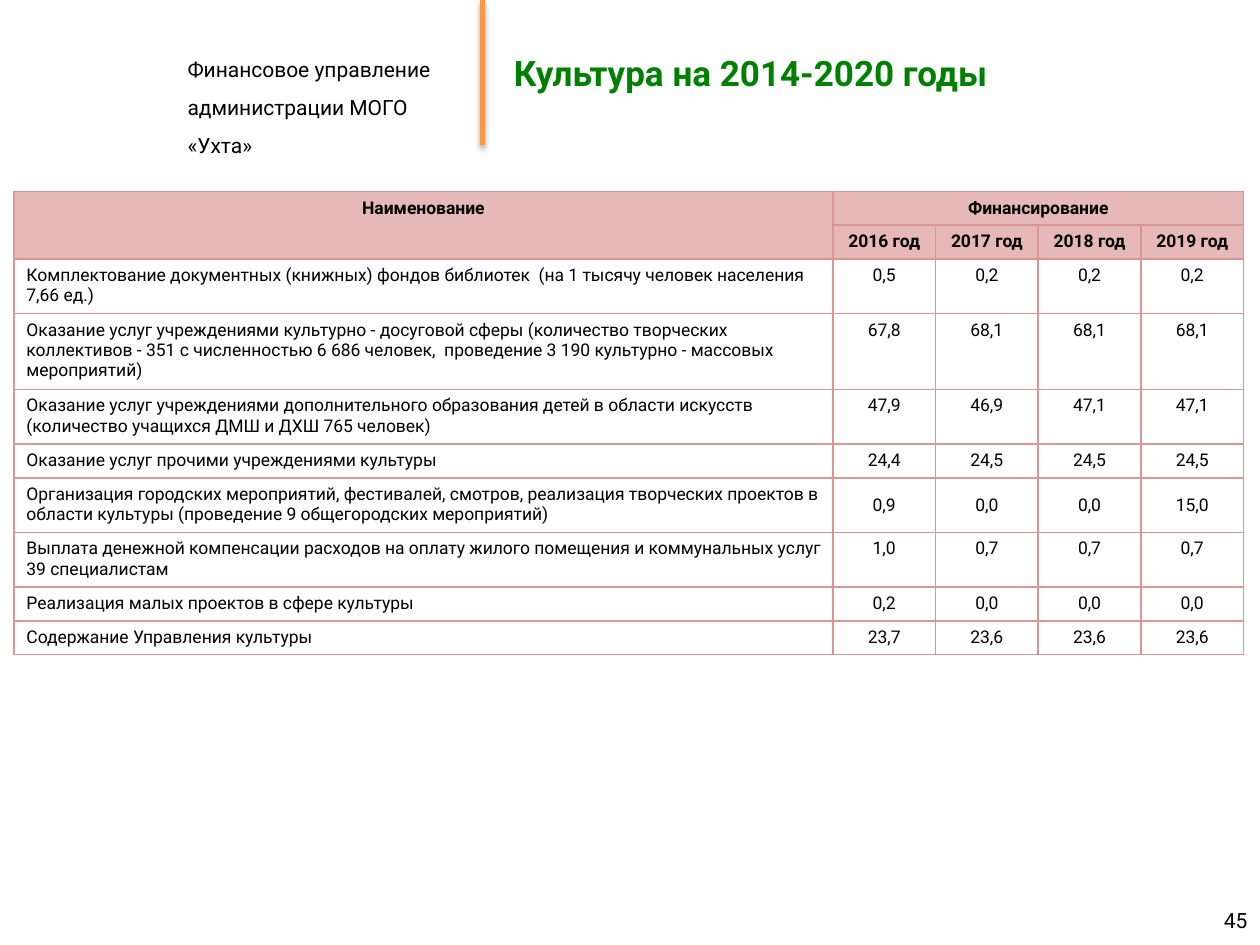
from lxml.etree import SubElement
from pptx import Presentation
from pptx.dml.color import RGBColor
from pptx.enum.shapes import MSO_CONNECTOR
from pptx.enum.text import MSO_ANCHOR, PP_ALIGN
from pptx.oxml import parse_xml
from pptx.oxml.ns import nsdecls, qn
from pptx.util import Inches, Pt

COLORS = {"text": "000000", "title": "008000", "accent": "F79646",
          "header": "E6B9B8", "border": "D99694", "body": "FFFFFF"}
YEARS = ["2016 год", "2017 год", "2018 год", "2019 год"]

# name, number of text lines, anchor of the figures, figures by year
TOP, MIDDLE = MSO_ANCHOR.TOP, MSO_ANCHOR.MIDDLE
EXPENSES = [
    ("Комплектование документных (книжных) фондов библиотек  (на 1 тысячу человек населения 7,66 ед.)",
     2, TOP, ["0,5", "0,2", "0,2", "0,2"]),
    ("Оказание услуг учреждениями культурно - досуговой сферы (количество творческих коллективов - 351 "
     "с численностью 6 686 человек,  проведение 3 190 культурно - массовых мероприятий)",
     3, TOP, ["67,8", "68,1", "68,1", "68,1"]),
    ("Оказание услуг учреждениями дополнительного образования детей в области искусств "
     "(количество учащихся ДМШ и ДХШ 765 человек)",
     2, TOP, ["47,9", "46,9", "47,1", "47,1"]),
    ("Оказание услуг прочими учреждениями культуры",
     1, MIDDLE, ["24,4", "24,5", "24,5", "24,5"]),
    ("Организация городских мероприятий, фестивалей, смотров, реализация творческих проектов "
     "в области культуры (проведение 9 общегородских мероприятий)",
     2, MIDDLE, ["0,9", "0,0", "0,0", "15,0"]),
    ("Выплата денежной компенсации расходов на оплату жилого помещения и коммунальных услуг 39 специалистам",
     2, TOP, ["1,0", "0,7", "0,7", "0,7"]),
    ("Реализация малых проектов в сфере культуры",
     1, TOP, ["0,2", "0,0", "0,0", "0,0"]),
    ("Содержание Управления культуры",
     1, TOP, ["23,7", "23,6", "23,6", "23,6"]),
]


def grid(*units):
    """Turn grid units, 100 columns by 75 rows on the slide, into lengths."""
    return [Inches(u / 10) for u in units]


class Page:
    font = "Roboto"

    def __init__(self, prs):
        self.s = prs.slides.add_slide(prs.slide_layouts[6])

    def fill_text(self, tf, text, size, color="text", bold=False, align=PP_ALIGN.LEFT, spacing=None):
        tf.text = text
        for p in tf.paragraphs:
            p.alignment = align
            p.line_spacing = spacing
            for r in p.runs:
                r.font.name, r.font.size, r.font.bold = self.font, Pt(size), bold
                r.font.color.rgb = RGBColor.from_string(COLORS[color])

    def text(self, box, text, size, anchor=TOP, **style):
        tf = self.s.shapes.add_textbox(*grid(*box)).text_frame
        tf.word_wrap = True
        tf.vertical_anchor = anchor
        self.fill_text(tf, text, size, **style)

    def divider(self, x, bottom):
        line = self.s.shapes.add_connector(MSO_CONNECTOR.STRAIGHT, *grid(x, 0, x, bottom))
        line.line.color.rgb = RGBColor.from_string(COLORS["accent"])
        line.line.width = Pt(3)
        effects = SubElement(line._element.spPr, qn("a:effectLst"))
        shadow = SubElement(effects, qn("a:outerShdw"), blurRad=str(Pt(3.1)), dist=str(Pt(1.8)),
                            dir="5400000", rotWithShape="0")
        color = SubElement(shadow, qn("a:srgbClr"), val="000000")
        SubElement(color, qn("a:alpha"), val="35000")

    def cell(self, cell, text, fill="body", anchor=TOP, **style):
        cell.fill.solid()
        cell.fill.fore_color.rgb = RGBColor.from_string(COLORS[fill])
        cell.vertical_anchor = anchor
        tc_pr = cell._tc.get_or_add_tcPr()
        for i, side in enumerate("LRTB"):
            tc_pr.insert(i, parse_xml(
                f'<a:ln{side} {nsdecls("a")} w="{Pt(1)}"><a:solidFill>'
                f'<a:srgbClr val="{COLORS["border"]}"/></a:solidFill></a:ln{side}>'))
        self.fill_text(cell.text_frame, text, 10, **style)

    def expense_table(self, left, top, name_width, year_width):
        lines = [1, 1] + [row[1] for row in EXPENSES]
        heights = [1.02 + 1.62 * n for n in lines]
        widths = [name_width] + [year_width] * len(YEARS)
        frame = self.s.shapes.add_table(len(heights), len(widths),
                                        *grid(left, top, sum(widths), sum(heights)))
        table = frame.table
        table.first_row = table.horz_banding = False
        for column, width in zip(table.columns, grid(*widths)):
            column.width = width
        for row, height in zip(table.rows, grid(*heights)):
            row.height = height

        headings = [["Наименование", "Финансирование", "", "", ""], ["", *YEARS]]
        for r, labels in enumerate(headings):
            for c, label in enumerate(labels):
                self.cell(table.cell(r, c), label, "header", bold=True, align=PP_ALIGN.CENTER)
        table.cell(0, 0).merge(table.cell(1, 0))
        table.cell(0, 1).merge(table.cell(0, len(YEARS)))

        for r, (name, _, anchor, figures) in enumerate(EXPENSES, len(headings)):
            self.cell(table.cell(r, 0), name)
            for c, figure in enumerate(figures, 1):
                self.cell(table.cell(r, c), figure, anchor=anchor, align=PP_ALIGN.CENTER)


def main():
    prs = Presentation()
    prs.slide_width, prs.slide_height = grid(100, 75)
    page = Page(prs)
    page.text((13.9, 3, 24, 6.6), "Финансовое управление\nадминистрации МОГО «Ухта»", 12, spacing=1.5)
    page.divider(38.3, 11.5)
    page.text((39.8, 0, 60.2, 11.5), "Культура на 2014-2020 годы", 20, MIDDLE, color="title", bold=True)
    page.text((76.7, 71, 23.3, 4), "45", 12, MIDDLE, align=PP_ALIGN.RIGHT)
    page.expense_table(1.1, 15.2, 65, 8.15)
    prs.save("out.pptx")


if __name__ == "__main__":
    main()
